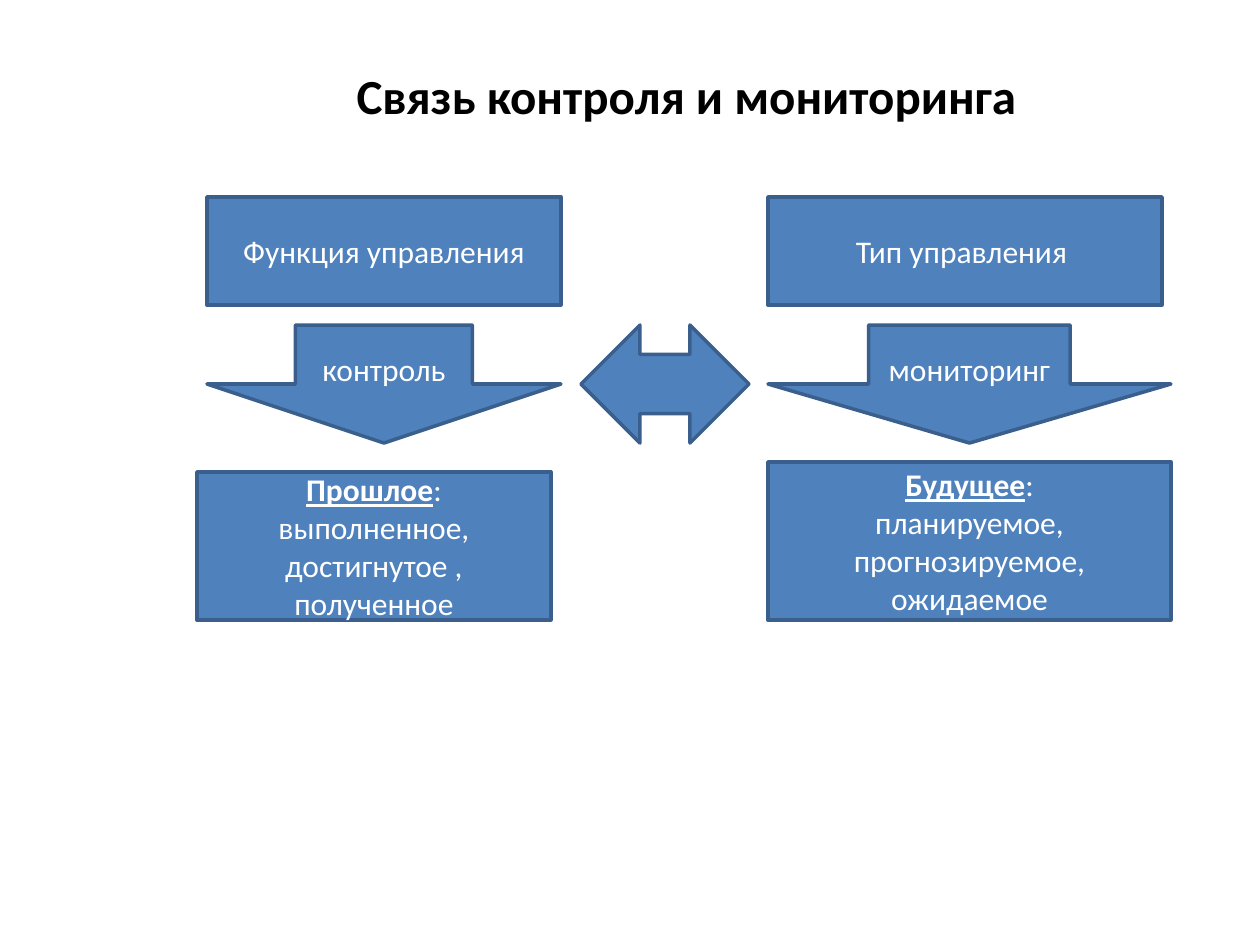
from pptx import Presentation
from pptx.dml.color import RGBColor
from pptx.enum.shapes import MSO_SHAPE as Shape
from pptx.enum.text import MSO_ANCHOR as Anchor, MSO_AUTO_SIZE as AutoSize, PP_ALIGN as Align
from pptx.util import Emu, Pt

PX_PER_INCH = 126
BLUE = RGBColor(0x4F, 0x81, 0xBD)
DARK_BLUE = RGBColor(0x3A, 0x5F, 0x8C)
WHITE = RGBColor(0xFF, 0xFF, 0xFF)
BLACK = RGBColor(0x00, 0x00, 0x00)
FONT = "Calibri"

ROW_TOP = 197
HEAD_HEIGHT = 108
ARROW_OFFSET = 128
ARROW_HEIGHT = 118


def px(length):
    """Turn whole pixels into EMU."""
    return Emu(round(length * 914400 / PX_PER_INCH))


def style_run(run, size, color, bold=False, underline=False):
    """Set the font of one run."""
    font = run.font
    font.name, font.size, font.color.rgb = FONT, Pt(size), color
    font.bold, font.underline = bold, underline


def add_block(slide, preset, box, lines=()):
    """Add a blue outlined shape with centred white lines."""
    block = slide.shapes.add_shape(preset, *map(px, box))
    block.shadow.inherit = False
    block.fill.solid()
    block.fill.fore_color.rgb = BLUE
    block.line.color.rgb = DARK_BLUE
    block.line.width = Pt(2)
    frame = block.text_frame
    frame.word_wrap = True
    frame.vertical_anchor = Anchor.MIDDLE
    frame.text = "\n".join(lines)
    for paragraph in frame.paragraphs:
        paragraph.alignment = Align.CENTER
        for run in paragraph.runs:
            style_run(run, 18, WHITE)
    return block


def add_title(slide, box, wording):
    """Place and format the slide title."""
    title = slide.shapes.title
    title.left, title.top, title.width, title.height = map(px, box)
    frame = title.text_frame
    frame.text = wording
    frame.word_wrap = False
    frame.auto_size = AutoSize.SHAPE_TO_FIT_TEXT
    frame.vertical_anchor = Anchor.TOP
    frame.paragraphs[0].alignment = Align.LEFT
    style_run(frame.paragraphs[0].runs[0], 28, BLACK, bold=True)


def add_column(slide, box, head, arrow, period, aspects, indent, head_width, period_height):
    """Add a heading, a down arrow and a period block standing on the box's bottom."""
    left, top, width, height = box
    add_block(slide, Shape.RECTANGLE, (left + indent, top, head_width, HEAD_HEIGHT), [head])
    add_block(slide, Shape.DOWN_ARROW,
              (left + indent, top + ARROW_OFFSET, width - indent, ARROW_HEIGHT), [arrow])
    period_block = add_block(
        slide, Shape.RECTANGLE,
        (left, top + height - period_height, width - indent, period_height),
        [period, *aspects])
    period_line = period_block.text_frame.paragraphs[0]
    style_run(period_line.runs[0], 18, WHITE, bold=True, underline=True)
    colon = period_line.add_run()
    colon.text = ":"
    style_run(colon, 18, WHITE)


def main():
    """Build the slide and save it."""
    deck = Presentation()
    deck.slide_width, deck.slide_height = px(1260), px(945)
    slide = deck.slides.add_slide(deck.slide_layouts[5])
    add_title(slide, (344, 59, 692, 72), "Связь контроля и мониторинга")
    add_column(slide, (197, ROW_TOP, 364, 423), "Функция управления", "контроль",
               "Прошлое", ["выполненное,", "достигнутое , полученное"],
               indent=10, head_width=354, period_height=148)
    add_column(slide, (768, ROW_TOP, 403, 423), "Тип управления ", "мониторинг",
               "Будущее", ["планируемое,", "прогнозируемое,", "ожидаемое"],
               indent=0, head_width=394, period_height=158)
    add_block(slide, Shape.LEFT_RIGHT_ARROW,
              (581, ROW_TOP + ARROW_OFFSET, 168, ARROW_HEIGHT))
    deck.save("out.pptx")


if __name__ == "__main__":
    main()
